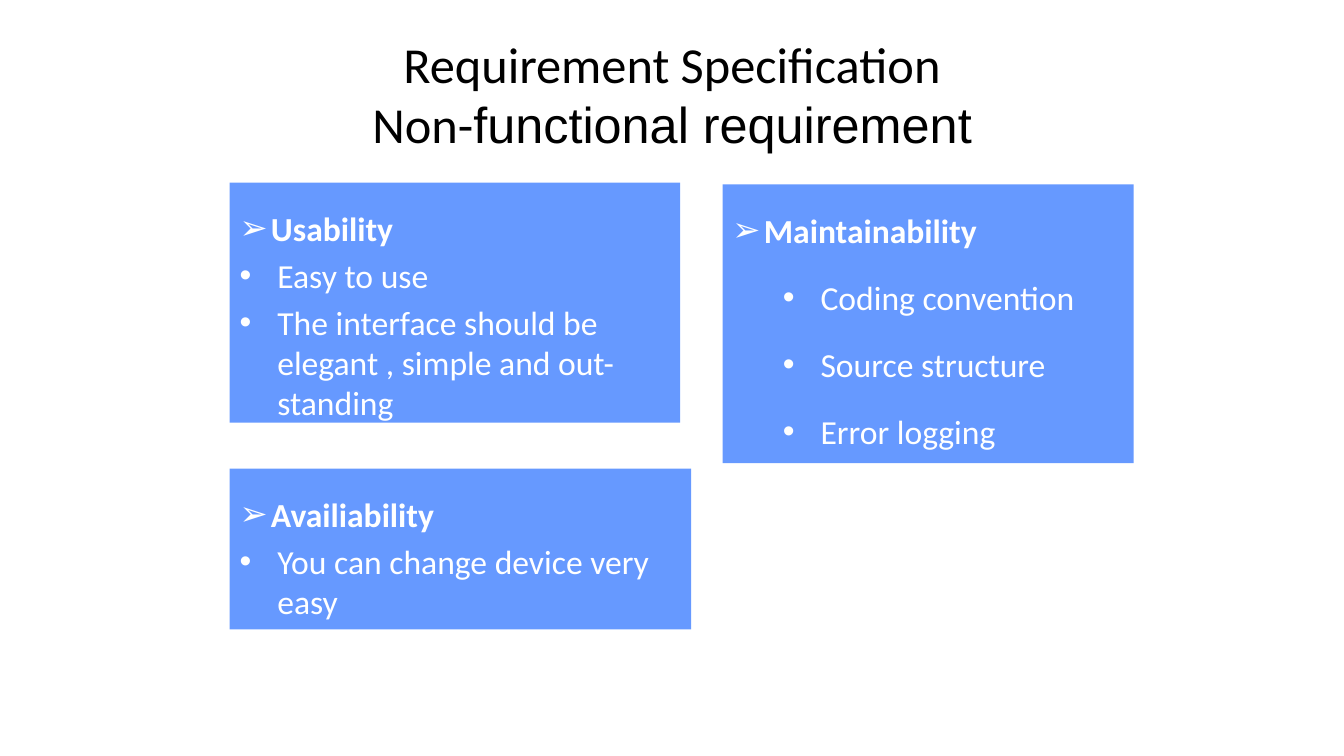
from lxml import etree
from pptx import Presentation
from pptx.dml.color import RGBColor
from pptx.enum.shapes import MSO_SHAPE
from pptx.enum.text import MSO_ANCHOR, MSO_AUTO_SIZE, PP_ALIGN
from pptx.oxml.ns import qn
from pptx.util import Cm, Pt

RECTANGLE = MSO_SHAPE.RECTANGLE
TOP, MIDDLE = MSO_ANCHOR.TOP, MSO_ANCHOR.MIDDLE
LEFT, CENTER = PP_ALIGN.LEFT, PP_ALIGN.CENTER
GROW = MSO_AUTO_SIZE.SHAPE_TO_FIT_TEXT

COLORS = {"panel": "6699FF", "title": "000000", "text": "FFFFFF"}

PANELS = [
    ((5.79, 4.6, 11.35, 6.05), "Usability",
     ["Easy to use",
      "The interface should be elegant , simple and out-standing"], 0, 1),
    ((18.21, 4.65, 10.36, 7.02), "Maintainability",
     ["Coding convention", "Source structure", "Error logging"], 1, 1.5),
    ((5.79, 11.81, 11.63, 4.05), "Availiability",
     ["You can change device very easy"], 0, 1),
]


def format_span(span, font, size, color, bold=False):
    span.font.name = font
    span.font.size = Pt(size)
    span.font.bold = bold
    span.font.color.rgb = RGBColor.from_string(COLORS[color])


def add_bullet(para, mark, margin, hanging):
    properties = para._p.get_or_add_pPr()
    properties.set("marL", str(Cm(margin)))
    properties.set("indent", str(-Cm(hanging)))
    etree.SubElement(properties, qn("a:buFont")).set("typeface", "Arial")
    etree.SubElement(properties, qn("a:buChar")).set("char", mark)


def add_title(page, bounds):
    box = page.shapes.add_textbox(*map(Cm, bounds))
    frame = box.text_frame
    frame.word_wrap = True
    frame.vertical_anchor = MIDDLE
    para = frame.paragraphs[0]
    para.text = "Requirement Specification\vNon-"
    para.alignment = CENTER
    for span in para.runs:
        format_span(span, "Calibri", 36, "title")
    ending = para.add_run()
    ending.text = "functional requirement"
    format_span(ending, "Arial", 36, "title")


def add_panel(page, bounds, heading, items, level, item_spacing):
    box = page.shapes.add_shape(RECTANGLE, *map(Cm, bounds))
    box.shadow.inherit = False
    box.fill.solid()
    box.fill.fore_color.rgb = RGBColor.from_string(COLORS["panel"])
    box.line.fill.background()
    frame = box.text_frame
    frame.word_wrap = True
    frame.auto_size = GROW
    frame.vertical_anchor = TOP
    frame.text = "\n".join([heading, *items])
    for index, para in enumerate(frame.paragraphs):
        is_heading = index == 0
        para.alignment = LEFT
        para.space_before = Pt(4.8)
        para.line_spacing = 1.5 if is_heading else float(item_spacing)
        if is_heading:
            add_bullet(para, "➢", 0.79, 0.79)
        else:
            para.level = level
            add_bullet(para, "•", 0.95 + 1.27 * level, 0.95)
        format_span(para.runs[0], "Calibri", 24, "text", is_heading)


def main():
    deck = Presentation()
    deck.slide_width, deck.slide_height = Cm(33.87), Cm(19.05)
    page = deck.slides.add_slide(deck.slide_layouts[6])
    add_title(page, (1.7, 0.76, 30.48, 3.18))
    for panel in PANELS:
        add_panel(page, *panel)
    deck.save("out.pptx")


if __name__ == "__main__":
    main()
